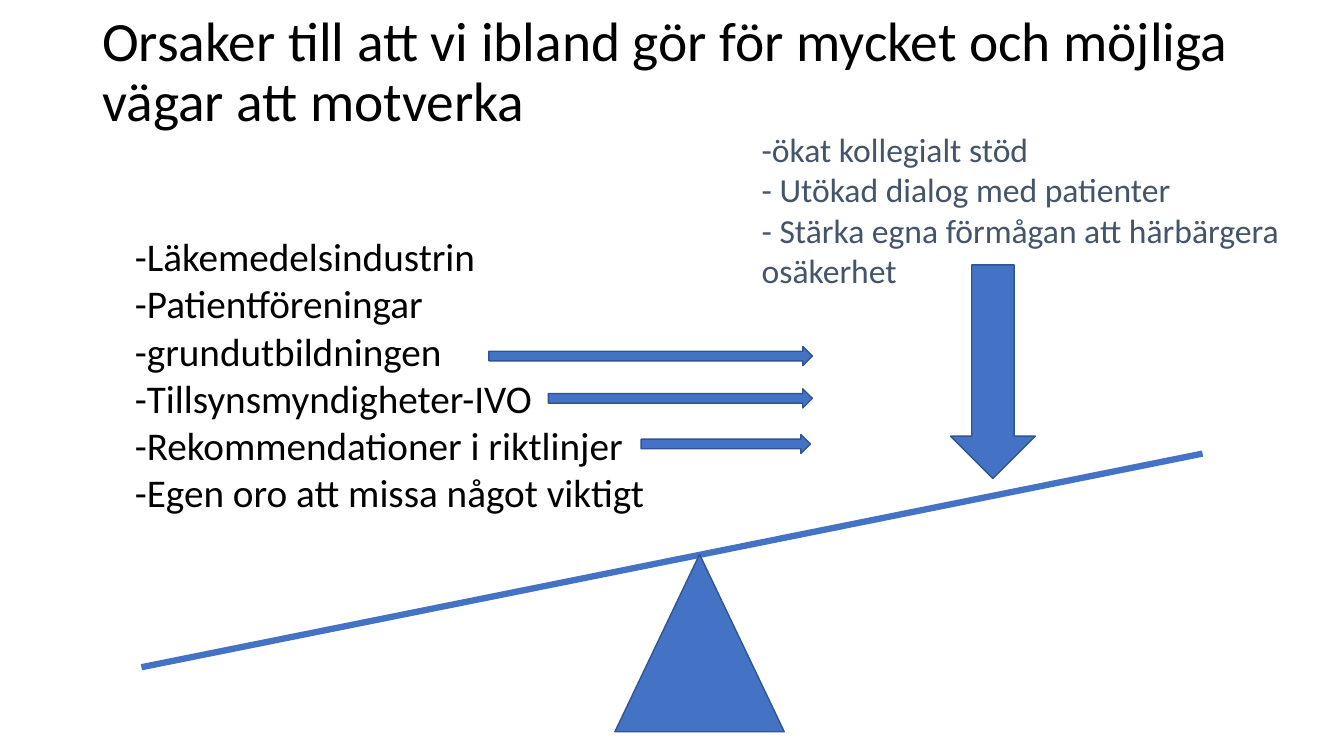
"""Build a slide with a tilted seesaw, its causes and its counterweights."""
from dataclasses import dataclass

from lxml import etree
from pptx import Presentation
from pptx import util as u
from pptx.dml.color import RGBColor
from pptx.enum import shapes, text
from pptx.oxml import ns

BLUE = RGBColor(0x44, 0x72, 0xC4)
OUTLINE = RGBColor(0x32, 0x54, 0x91)
BLACK = RGBColor(0x00, 0x00, 0x00)
SLATE = RGBColor(0x44, 0x54, 0x6A)
ARROW_HEIGHT = 13.7


@dataclass(frozen=True)
class Box:
    left: float
    top: float
    width: float
    height: float

    def lengths(self) -> list[u.Pt]:
        return [u.Pt(value) for value in (self.left, self.top, self.width, self.height)]


@dataclass(frozen=True)
class TextBlock:
    box: Box
    lines: tuple[str, ...]
    size: float
    color: RGBColor
    line_spacing: float = 1.0
    anchor: text.MSO_ANCHOR = text.MSO_ANCHOR.TOP


@dataclass(frozen=True)
class Figure:
    kind: shapes.MSO_SHAPE
    box: Box


TEXT_BLOCKS = (
    TextBlock(
        Box(89.3, 162.7, 390, 211),
        (
            "-Läkemedelsindustrin",
            "-Patientföreningar",
            "-grundutbildningen",
            "-Tillsynsmyndigheter-IVO",
            "-Rekommendationer i riktlinjer",
            "-Egen oro att missa något viktigt",
        ),
        28,
        BLACK,
    ),
    TextBlock(
        Box(66, 17.3, 828, 70.6),
        ("Orsaker till att vi ibland gör för mycket och möjliga vägar att motverka",),
        39.6,
        BLACK,
        0.9,
        text.MSO_ANCHOR.MIDDLE,
    ),
    TextBlock(
        Box(537, 88.6, 390, 123.8),
        (
            "-ökat kollegialt stöd",
            "- Utökad dialog med patienter",
            "- Stärka egna förmågan att härbärgera osäkerhet",
        ),
        24,
        SLATE,
    ),
)

FIGURES = (
    Figure(shapes.MSO_SHAPE.ISOSCELES_TRIANGLE, Box(439.2, 396, 121, 126.7)),
    Figure(shapes.MSO_SHAPE.RIGHT_ARROW, Box(349.2, 247.5, 231.1, ARROW_HEIGHT)),
    Figure(shapes.MSO_SHAPE.RIGHT_ARROW, Box(391.7, 277.7, 188.6, ARROW_HEIGHT)),
    Figure(shapes.MSO_SHAPE.RIGHT_ARROW, Box(457.9, 310.3, 121, ARROW_HEIGHT)),
    Figure(shapes.MSO_SHAPE.DOWN_ARROW, Box(679, 189.2, 60.5, 152.6)),
)


def add_plank(slide) -> None:
    plank = slide.shapes.add_connector(
        shapes.MSO_CONNECTOR.STRAIGHT, u.Pt(101), u.Pt(476.6), u.Pt(859), u.Pt(324)
    )
    plank.line.color.rgb = BLUE
    plank.line.width = u.Pt(4.5)
    etree.SubElement(plank._element.spPr, ns.qn("a:effectLst"))


def add_figure(slide, figure: Figure) -> None:
    shape = slide.shapes.add_shape(figure.kind, *figure.box.lengths())
    shape.shadow.inherit = False
    shape.fill.solid()
    shape.fill.fore_color.rgb = BLUE
    shape.line.color.rgb = OUTLINE
    shape.line.width = u.Pt(1)


def add_text(slide, block: TextBlock) -> None:
    frame = slide.shapes.add_textbox(*block.box.lengths()).text_frame
    frame.word_wrap = True
    frame.vertical_anchor = block.anchor
    frame.text = "\n".join(block.lines)
    for paragraph in frame.paragraphs:
        paragraph.line_spacing = block.line_spacing
        paragraph.font.name = "Calibri"
        paragraph.font.size = u.Pt(block.size)
        paragraph.font.color.rgb = block.color


def main() -> None:
    presentation = Presentation()
    presentation.slide_width = u.Pt(960)
    presentation.slide_height = u.Pt(540)
    slide = presentation.slides.add_slide(presentation.slide_layouts[6])
    add_plank(slide)
    for block in TEXT_BLOCKS:
        add_text(slide, block)
    for figure in FIGURES:
        add_figure(slide, figure)
    presentation.save("out.pptx")


if __name__ == "__main__":
    main()
